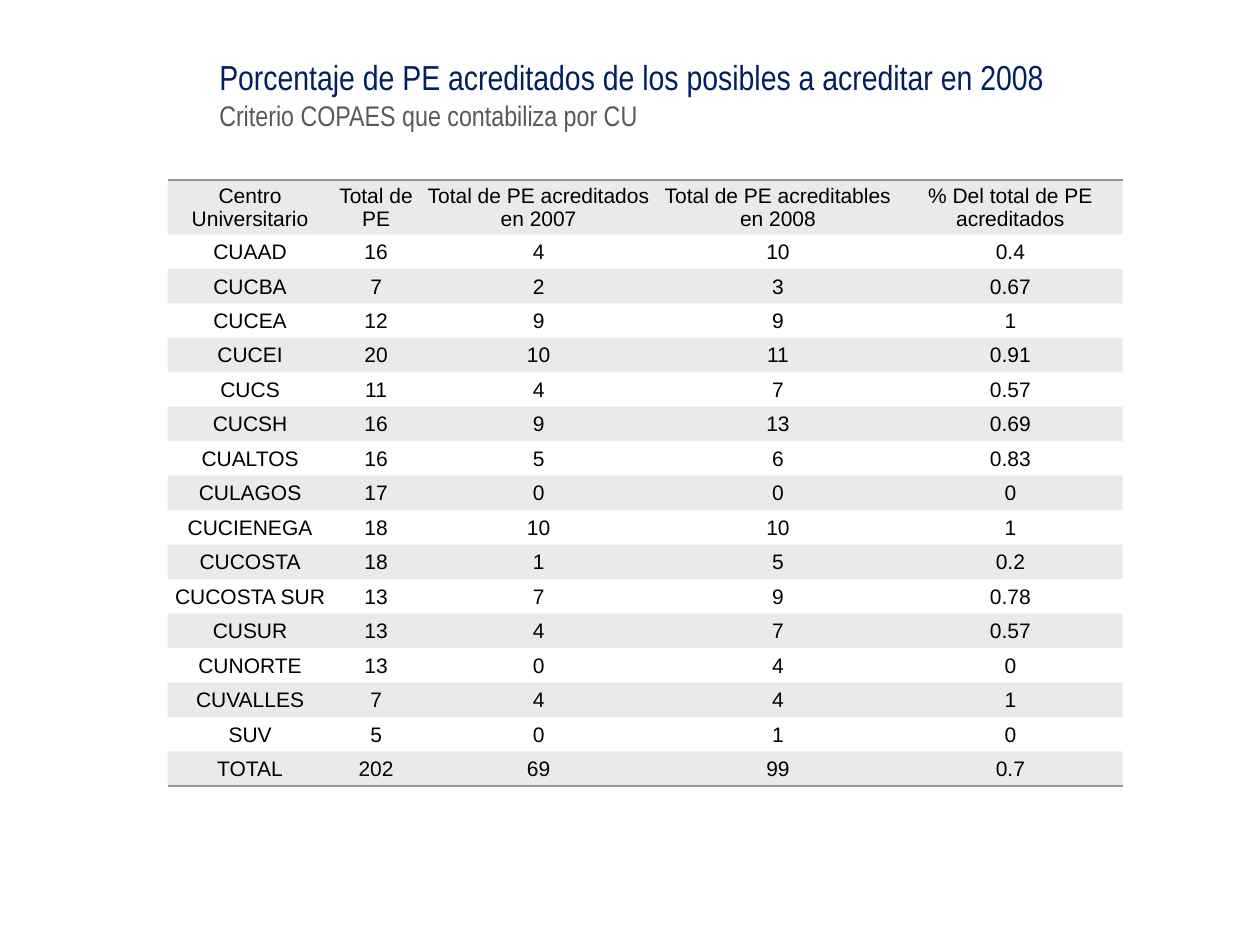
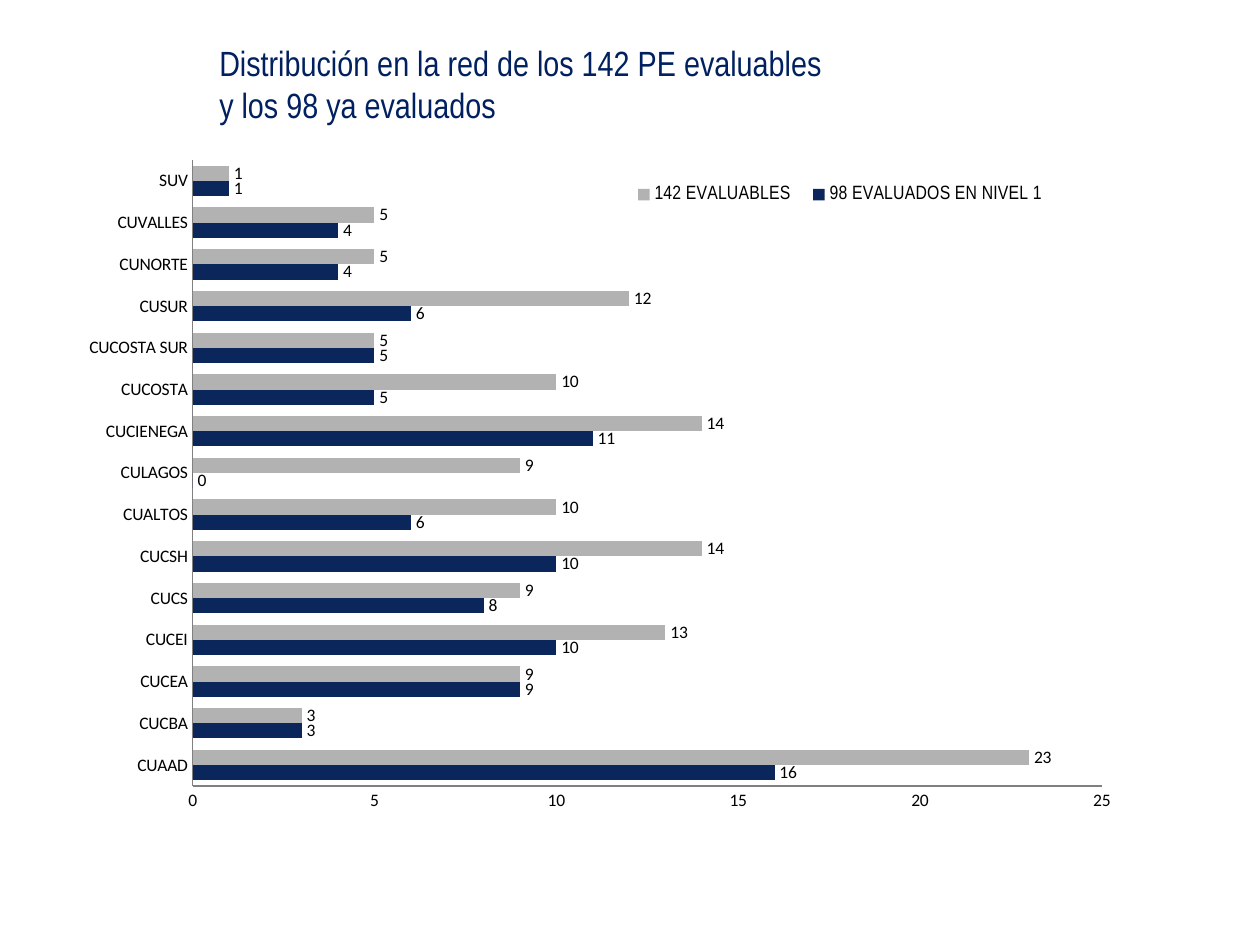
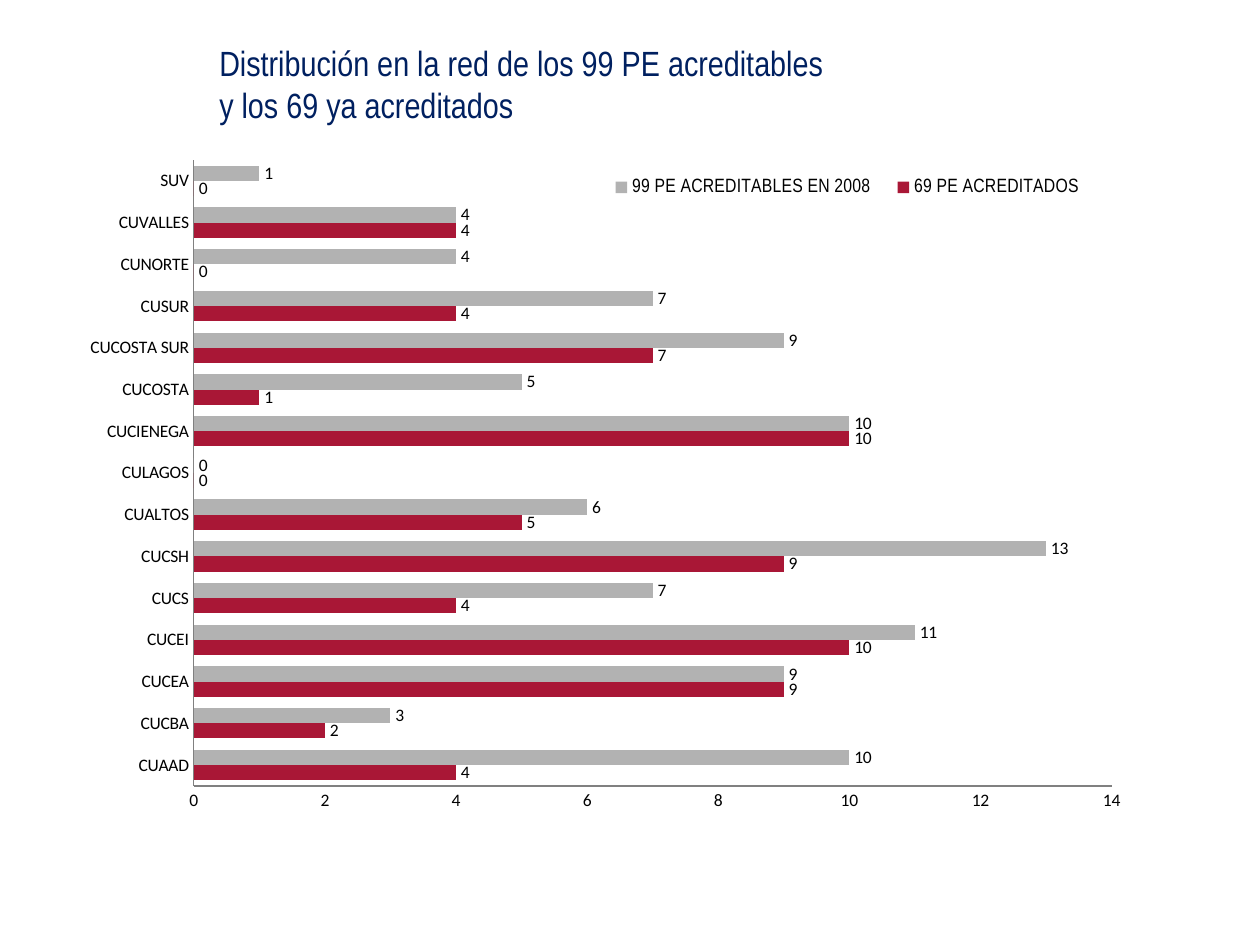
from dataclasses import dataclass

from lxml.etree import SubElement
from pptx import Presentation
from pptx.chart.chart import Chart
from pptx.chart.data import CategoryChartData
from pptx.dml.color import RGBColor
from pptx.enum.chart import XL_CHART_TYPE as ChartType
from pptx.enum.chart import XL_LABEL_POSITION as LabelPosition
from pptx.enum.chart import XL_LEGEND_POSITION as LegendPosition
from pptx.enum.chart import XL_TICK_MARK as TickMark
from pptx.enum.text import MSO_ANCHOR as Anchor
from pptx.enum.text import MSO_AUTO_SIZE as AutoSize
from pptx.enum.text import PP_ALIGN as Align
from pptx.oxml import parse_xml
from pptx.oxml.ns import nsdecls, qn
from pptx.slide import Slide
from pptx.table import _Cell as Cell
from pptx.util import Emu, Inches, Pt

COLORS = {
    "title": "002060",
    "subtitle": "595959",
    "text": "000000",
    "band": "969696",
    "axis": "808080",
    "total": "B2B2B2",
    "evaluated": "0B265B",
    "accredited": "A91736",
}
TITLE_FONT = "Arial Narrow"
TABLE_FONT = "Arial"
CHART_FONT = "Calibri"
PLAIN_TABLE_STYLE = "{2D5ABB26-0587-4C30-8999-92F81FD0307C}"

SLIDE_WIDTH, SLIDE_HEIGHT = Inches(10), Inches(7.5)
GRID_COLUMNS, GRID_ROWS = 100, 75

CENTERS = [
    "CUAAD", "CUCBA", "CUCEA", "CUCEI", "CUCS", "CUCSH", "CUALTOS", "CULAGOS",
    "CUCIENEGA", "CUCOSTA", "CUCOSTA SUR", "CUSUR", "CUNORTE", "CUVALLES", "SUV",
]
PROGRAMS = [16, 7, 12, 20, 11, 16, 16, 17, 18, 18, 13, 13, 13, 7, 5]
ACCREDITED = [4, 2, 9, 10, 4, 9, 5, 0, 10, 1, 7, 4, 0, 4, 0]
ACCREDITABLE = [10, 3, 9, 11, 7, 13, 6, 0, 10, 5, 9, 7, 4, 4, 1]
EVALUATED = [16, 3, 9, 10, 8, 10, 6, 0, 11, 5, 5, 6, 4, 4, 1]
EVALUABLE = [23, 3, 9, 13, 9, 14, 10, 9, 14, 10, 5, 12, 5, 5, 1]

TABLE_HEADER = [
    "Centro Universitario",
    "Total de PE",
    "Total de PE acreditados\ven 2007",
    "Total de PE acreditables\ven 2008",
    "% Del total de PE acreditados",
]
TABLE_COLUMNS = [13.1, 6.9, 18.9, 19.1, 17.8]
HEADER_ROW, BODY_ROW = 4.3, 2.74


@dataclass(frozen=True)
class Box:
    left: float
    top: float
    width: float
    height: float

    def lengths(self) -> tuple[Emu, Emu, Emu, Emu]:
        return across(self.left), down(self.top), across(self.width), down(self.height)


@dataclass(frozen=True)
class TitleLine:
    text: str
    size: float = 20
    color: str = "title"


@dataclass(frozen=True)
class BarSeries:
    name: str
    values: list[int]
    color: str


@dataclass(frozen=True)
class BarSlide:
    title: list[TitleLine]
    box: Box
    legend: Box
    maximum: int
    step: int
    series: list[BarSeries]


TITLE_BOX = Box(16.4, 3.9, 71.1, 5.5)
TABLE_TITLE_BOX = Box(16.4, 4.7, 71.1, 5.5)
TABLE_BOX = Box(13.3, 14.3, sum(TABLE_COLUMNS), HEADER_ROW + BODY_ROW * (len(CENTERS) + 1))
PLOT_SHARE = Box(0.116, 0.072, 0.855, 0.87)

TABLE_TITLE = [
    TitleLine("Porcentaje de PE acreditados de los posibles a acreditar en 2008", 19.8),
    TitleLine("Criterio COPAES que contabiliza por CU", 16.2, "subtitle"),
]
BAR_SLIDES = [
    BarSlide(
        [TitleLine("Distribución en la red de los 142 PE evaluables"),
         TitleLine("y los 98 ya evaluados")],
        Box(5.5, 8.6, 84.4, 57.1),
        Box(0.52, 0.09, 0.41, 0.06),
        25,
        5,
        [BarSeries("98 EVALUADOS EN NIVEL 1", EVALUATED, "evaluated"),
         BarSeries("142 EVALUABLES", EVALUABLE, "total")],
    ),
    BarSlide(
        [TitleLine("Distribución en la red de los 99 PE acreditables"),
         TitleLine("y los 69 ya acreditados")],
        Box(5.5, 8.6, 85.2, 57.1),
        Box(0.49, 0.08, 0.47, 0.06),
        14,
        2,
        [BarSeries("69 PE ACREDITADOS", ACCREDITED, "accredited"),
         BarSeries("99 PE ACREDITABLES EN 2008", ACCREDITABLE, "total")],
    ),
]


def across(columns: float) -> Emu:
    return Emu(round(SLIDE_WIDTH * columns / GRID_COLUMNS))


def down(rows: float) -> Emu:
    return Emu(round(SLIDE_HEIGHT * rows / GRID_ROWS))


def color(name: str) -> RGBColor:
    return RGBColor.from_string(COLORS[name])


def format_font(font, name: str, size: float, color_name: str = "text") -> None:
    font.name = name
    font.size = Pt(size)
    font.color.rgb = color(color_name)


def add_title(slide: Slide, lines: list[TitleLine], box: Box) -> None:
    title = slide.shapes.title
    title.left, title.top, title.width, title.height = box.lengths()
    text_frame = title.text_frame
    text_frame.auto_size = AutoSize.NONE
    text_frame.word_wrap = True
    text_frame.vertical_anchor = Anchor.MIDDLE
    paragraph = text_frame.paragraphs[0]
    paragraph.text = "\v".join(line.text for line in lines)
    paragraph.alignment = Align.LEFT
    for run, line in zip(paragraph.runs, lines):
        format_font(run.font, TITLE_FONT, line.size, line.color)


def add_border(cell: Cell, tag: str) -> None:
    cell._tc.get_or_add_tcPr().insert(0, parse_xml(
        f'<a:{tag} {nsdecls("a")} w="{Pt(1)}"><a:solidFill>'
        f'<a:srgbClr val="{COLORS["band"]}"/></a:solidFill></a:{tag}>'
    ))


def format_cell(cell: Cell, text: str, banded: bool) -> None:
    cell.margin_left = cell.margin_right = cell.margin_top = Inches(0.01)
    cell.margin_bottom = 0
    cell.vertical_anchor = Anchor.MIDDLE
    paragraph = cell.text_frame.paragraphs[0]
    paragraph.text = text
    paragraph.alignment = Align.CENTER
    for run in paragraph.runs:
        format_font(run.font, TABLE_FONT, 12)
    if banded:
        cell.fill.solid()
        cell.fill.fore_color.rgb = color("band")
        band_color = cell._tc.tcPr.find(".//" + qn("a:srgbClr"))
        SubElement(band_color, qn("a:alpha")).set("val", "20000")
    else:
        cell.fill.background()


def table_rows() -> list[list[str]]:
    names = CENTERS + ["TOTAL"]
    counts = [values + [sum(values)] for values in (PROGRAMS, ACCREDITED, ACCREDITABLE)]
    rows = [TABLE_HEADER]
    for name, programs, accredited, accreditable in zip(names, *counts):
        share = accredited / accreditable if accreditable else 0
        rows.append([name, str(programs), str(accredited), str(accreditable), f"{share:.2g}"])
    return rows


def add_accreditation_table(slide: Slide) -> None:
    rows = table_rows()
    table = slide.shapes.add_table(len(rows), len(TABLE_HEADER), *TABLE_BOX.lengths()).table
    table._tbl.tblPr.find(qn("a:tableStyleId")).text = PLAIN_TABLE_STYLE
    table.first_row = table.horz_banding = False
    for column, width in zip(table.columns, TABLE_COLUMNS):
        column.width = across(width)
    for index, texts in enumerate(rows):
        table.rows[index].height = down(BODY_ROW if index else HEADER_ROW)
        for cell, text in zip(table.rows[index].cells, texts):
            format_cell(cell, text, index % 2 == 0)
    for column in range(len(TABLE_HEADER)):
        add_border(table.cell(0, column), "lnT")
        add_border(table.cell(len(rows) - 1, column), "lnB")


def layout_xml(share: Box, inner: bool = False):
    target = '<c:layoutTarget val="inner"/>' if inner else ""
    return parse_xml(
        f'<c:layout {nsdecls("c")}><c:manualLayout>{target}'
        f'<c:xMode val="edge"/><c:yMode val="edge"/>'
        f'<c:x val="{share.left}"/><c:y val="{share.top}"/>'
        f'<c:w val="{share.width}"/><c:h val="{share.height}"/>'
        f'</c:manualLayout></c:layout>'
    )


def format_axes(chart: Chart, maximum: int, step: int) -> None:
    for axis in (chart.category_axis, chart.value_axis):
        axis.major_tick_mark = axis.minor_tick_mark = TickMark.NONE
        axis.has_major_gridlines = False
        axis.format.line.color.rgb = color("axis")
        axis.format.line.width = Pt(0.75)
        format_font(axis.tick_labels.font, CHART_FONT, 10)
    chart.value_axis.minimum_scale = 0
    chart.value_axis.maximum_scale = maximum
    chart.value_axis.major_unit = step


def place_parts(chart: Chart, legend_share: Box) -> None:
    chart.has_legend = True
    legend = chart.legend
    legend.position = LegendPosition.TOP
    legend.include_in_layout = False
    format_font(legend.font, TITLE_FONT, 11)
    plot_area = chart._chartSpace.chart.plotArea
    for element in (plot_area, legend._element):
        for layout in element.findall(qn("c:layout")):
            element.remove(layout)
    plot_area.insert(0, layout_xml(PLOT_SHARE, inner=True))
    legend._element.find(qn("c:legendPos")).addnext(layout_xml(legend_share))


def add_bar_chart(slide: Slide, content: BarSlide) -> None:
    chart_data = CategoryChartData()
    chart_data.categories = CENTERS
    for series in content.series:
        chart_data.add_series(series.name, series.values)
    chart = slide.shapes.add_chart(
        ChartType.BAR_CLUSTERED, *content.box.lengths(), chart_data
    ).chart
    chart.has_title = False
    format_font(chart.font, CHART_FONT, 10)
    format_axes(chart, content.maximum, content.step)
    place_parts(chart, content.legend)
    plot = chart.plots[0]
    plot.gap_width = 75
    plot.overlap = 0
    plot.vary_by_categories = False
    for bars, series in zip(plot.series, content.series):
        bars.invert_if_negative = False
        bars.format.fill.solid()
        bars.format.fill.fore_color.rgb = color(series.color)
        labels = bars.data_labels
        labels.show_value = True
        labels.position = LabelPosition.OUTSIDE_END
        format_font(labels.font, CHART_FONT, 10)


def main() -> None:
    presentation = Presentation()
    presentation.slide_width, presentation.slide_height = SLIDE_WIDTH, SLIDE_HEIGHT
    title_only = presentation.slide_layouts[5]

    slide = presentation.slides.add_slide(title_only)
    add_title(slide, TABLE_TITLE, TABLE_TITLE_BOX)
    add_accreditation_table(slide)

    for content in BAR_SLIDES:
        slide = presentation.slides.add_slide(title_only)
        add_title(slide, content.title, TITLE_BOX)
        add_bar_chart(slide, content)

    presentation.save("out.pptx")


if __name__ == "__main__":
    main()
